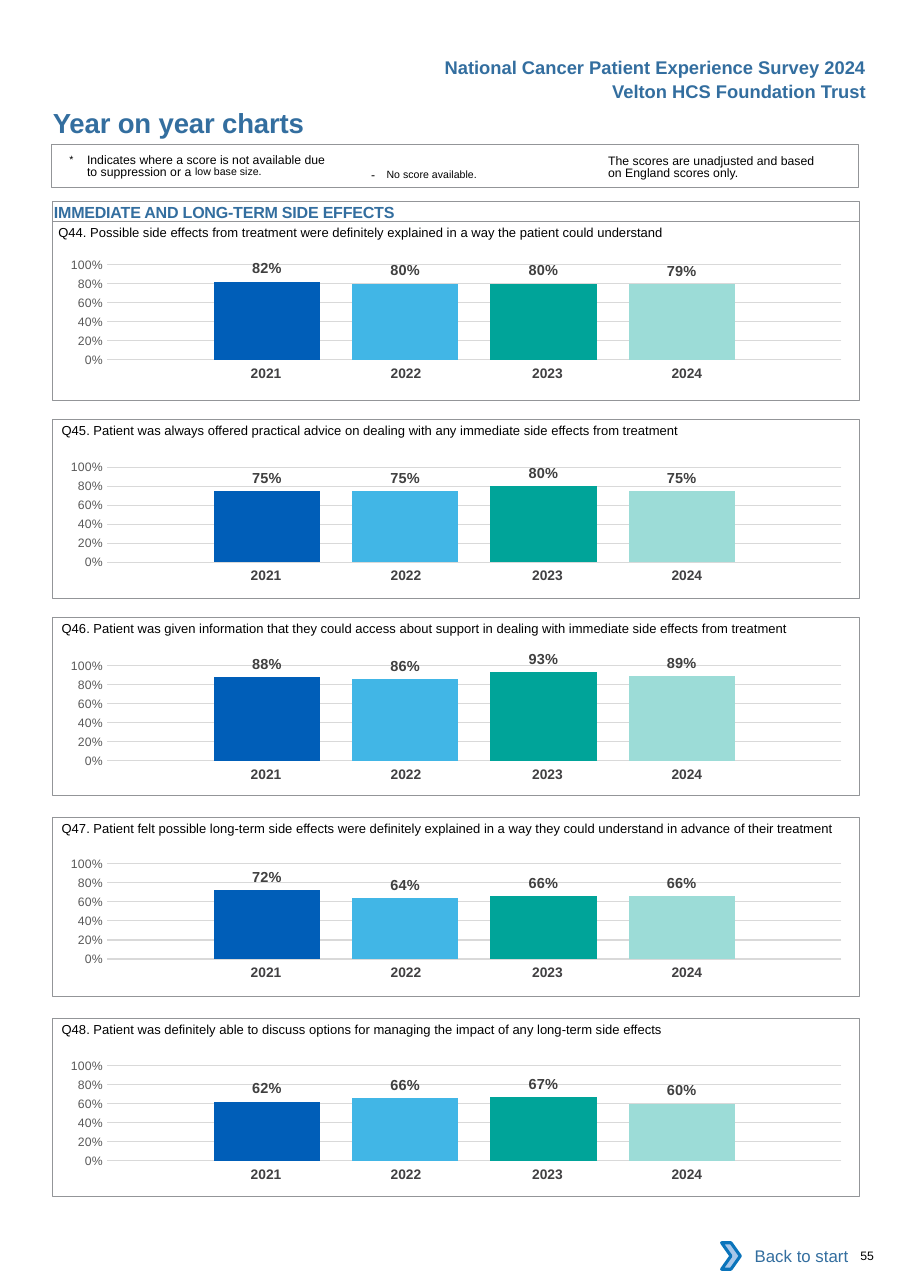
import lxml.etree
import pptx
import pptx.chart.data
import pptx.dml.color
import pptx.enum.chart
import pptx.enum.shapes
import pptx.enum.text
import pptx.oxml.ns
import pptx.util

SCALE = 9144
BLUE, BLACK, GREY = "336E9F", "000000", "939598"
YEARS = ["2021", "2022", "2023", "2024"]
FILLS = ["005EB8", "41B6E6", "00A499", "9CDCD7"]
LEFT, CENTER, RIGHT = (pptx.enum.text.PP_ALIGN.LEFT, pptx.enum.text.PP_ALIGN.CENTER,
                       pptx.enum.text.PP_ALIGN.RIGHT)
TOP, MIDDLE = pptx.enum.text.MSO_ANCHOR.TOP, pptx.enum.text.MSO_ANCHOR.MIDDLE
RECT = pptx.enum.shapes.MSO_SHAPE.RECTANGLE
CHEVRON = pptx.enum.shapes.MSO_SHAPE.CHEVRON

PANELS = [
    (53, 201, 222, [82, 80, 80, 79],
     "Q44. Possible side effects from treatment were definitely explained in a way "
     "the patient could understand"),
    (56, 381, 406, [75, 75, 80, 75],
     "Q45. Patient was always offered practical advice on dealing with any immediate "
     "side effects from treatment"),
    (56, 560, 586, [88, 86, 93, 89],
     "Q46. Patient was given information that they could access about support in "
     "dealing with immediate side effects from treatment"),
    (56, 742, 766, [72, 64, 66, 66],
     "Q47. Patient felt possible long-term side effects were definitely explained in "
     "a way they could understand in advance of their treatment"),
    (56, 924, 949, [62, 66, 67, 60],
     "Q48. Patient was definitely able to discuss options for managing the impact of "
     "any long-term side effects"),
]


def px(count):
    return pptx.util.Emu(count * SCALE)


def hue(code):
    return pptx.dml.color.RGBColor.from_string(code)


def put(item, values):
    for name, value in values.items():
        setattr(item, name, value)


def style(font, size, code, bold=False, name="Arial"):
    put(font, {"name": name, "size": pptx.util.Pt(size), "bold": bold})
    font.color.rgb = hue(code)


def fill_text(shape, runs, size, code=BLUE, bold=False, align=LEFT,
              anchor=MIDDLE, pads=(0, 0, 0, 0), wrap=True):
    left, top, right, bottom = map(px, pads)
    put(shape.text_frame, {
        "margin_left": left, "margin_top": top, "margin_right": right,
        "margin_bottom": bottom, "vertical_anchor": anchor, "word_wrap": wrap})
    line = shape.text_frame.paragraphs[0]
    line.alignment = align
    for words, extra in runs:
        run = line.add_run()
        run.text = words
        style(run.font, extra.get("size", size), code, bold)
        for key in ("baseline", "spc"):
            if key in extra:
                run._r.get_or_add_rPr().set(key, str(extra[key]))
    return line


def add_text(slide, box, runs, size, **look):
    if isinstance(runs, str):
        runs = [(runs, {})]
    shape = slide.shapes.add_textbox(*map(px, box))
    return fill_text(shape, runs, size, **look)


def add_box(slide, box, kind=RECT, fill=None, edge=None, width=0.5):
    shape = slide.shapes.add_shape(kind, *map(px, box))
    shape.shadow.inherit = False
    if fill:
        shape.fill.solid()
        shape.fill.fore_color.rgb = hue(fill)
    else:
        shape.fill.background()
    if edge:
        shape.line.color.rgb = hue(edge)
        shape.line.width = pptx.util.Pt(width)
    else:
        shape.line.fill.background()
    return shape


def add_years(slide, top):
    table = slide.shapes.add_table(1, 4, *map(px, (173, top, 515, 27))).table
    put(table, {"first_row": False, "horz_banding": False})
    for spot, (year, width, pad) in enumerate(
            zip(YEARS, (127, 127, 134, 127), (0, 0, 4, 12))):
        table.columns[spot].width = px(width)
        cell = table.cell(0, spot)
        cell.fill.background()
        put(cell, {"margin_left": px(10), "margin_right": px(pad),
                   "margin_top": px(5), "margin_bottom": px(5)})
        line = cell.text_frame.paragraphs[0]
        line.alignment = CENTER
        run = line.add_run()
        run.text = year
        style(run.font, 9, "414042", True)


def set_plot(chart):
    tag = pptx.oxml.ns.qn
    area = chart._chartSpace.find(".//" + tag("c:plotArea"))
    for old in area.findall(tag("c:layout")):
        area.remove(old)
    layout = lxml.etree.Element(tag("c:layout"))
    area.insert(0, layout)
    manual = lxml.etree.SubElement(layout, tag("c:manualLayout"))
    for name, value in (("layoutTarget", "inner"), ("xMode", "edge"), ("yMode", "edge"),
                        ("x", "0.08"), ("y", "0.14"), ("w", "0.91"), ("h", "0.67")):
        lxml.etree.SubElement(manual, tag("c:" + name)).set("val", value)


def add_bars(slide, top, scores):
    data = pptx.chart.data.CategoryChartData(number_format="0%")
    data.categories = ["1"]
    for year, score in zip(YEARS, scores):
        data.add_series(year, [score / 100])
    chart = slide.shapes.add_chart(
        pptx.enum.chart.XL_CHART_TYPE.COLUMN_CLUSTERED,
        *map(px, (39, top, 732, 129)), data).chart
    put(chart, {"has_legend": False, "has_title": False})
    style(chart.font, 10, BLACK, name="Calibri")
    set_plot(chart)
    chart.category_axis.visible = False
    axis = chart.value_axis
    none = pptx.enum.chart.XL_TICK_MARK.NONE
    put(axis, {"minimum_scale": 0, "maximum_scale": 1, "major_unit": 0.2,
               "major_tick_mark": none, "minor_tick_mark": none,
               "has_major_gridlines": True})
    axis.format.line.fill.background()
    grid = axis.major_gridlines.format.line
    grid.color.rgb = hue("D9D9D9")
    grid.width = pptx.util.Pt(0.75)
    form = {"number_format": "0%", "number_format_is_linked": False}
    put(axis.tick_labels, form)
    style(axis.tick_labels.font, 8, "595959")
    plot = chart.plots[0]
    put(plot, {"gap_width": 200, "overlap": -30, "vary_by_categories": False})
    for bar, code in zip(plot.series, FILLS):
        bar.format.fill.solid()
        bar.format.fill.fore_color.rgb = hue(code)
        put(bar.data_labels, {
            **form, "show_value": True,
            "position": pptx.enum.chart.XL_LABEL_POSITION.OUTSIDE_END})
        style(bar.data_labels.font, 9.5, "404040", True)


def add_panel(slide, left, top, start, scores, words):
    add_years(slide, start + 105)
    add_bars(slide, start, scores)
    add_box(slide, (48, top, 732, 162), edge=GREY)
    add_text(slide, (left, top, 724, 20), words, 8.5, code=BLACK)


def add_notes(slide):
    add_box(slide, (47, 131, 732, 39), edge=GREY, width=0.75)
    star = add_text(slide, (63, 138, 238, 30), [
        ("*\t", {"size": 12, "baseline": 3000}),
        ("Indicates where a score is not available due to suppression or a ", {}),
        ("low base size.", {"size": 12, "baseline": 7000}),
    ], 8, code=BLACK, anchor=TOP, pads=(0, 3, 0, 0))
    for key, value in (("marL", 16), ("indent", -16)):
        star._p.get_or_add_pPr().set(key, str(px(value)))
    scope = add_text(slide, (552, 138, 195, 27),
                     "The scores are unadjusted and based on England scores only.",
                     8, code=BLACK, anchor=TOP, pads=(0, 3, 0, 0))
    for line in (star, scope):
        line.line_spacing = pptx.util.Pt(8.1)
    add_text(slide, (327, 141, 183, 24), [
        ("- ", {"spc": 260}),
        ("No score available.", {"size": 12, "baseline": 3000}),
    ], 8, code=BLACK, anchor=TOP, pads=(10, 5, 10, 5))


def main():
    deck = pptx.Presentation()
    put(deck, {"slide_width": px(826), "slide_height": px(1169)})
    slide = deck.slides.add_slide(deck.slide_layouts[6])
    for box, words in (
            ((392, 46, 404, 30), "National Cancer Patient Experience Survey 2024"),
            ((539, 68, 257, 30), "Velton HCS Foundation Trust")):
        add_text(slide, box, words, 12, bold=True, align=RIGHT,
                 pads=(10, 5, 10, 5), wrap=False)
    add_text(slide, (48, 96, 450, 30), [("Year on year charts", {"spc": -10})],
             18, bold=True)
    add_notes(slide)
    head = add_box(slide, (48, 183, 732, 18), edge=GREY)
    fill_text(head, [("IMMEDIATE AND LONG-TERM SIDE EFFECTS", {"spc": -10})],
              10.5, bold=True, pads=(1, 1, 0, 0))
    for panel in PANELS:
        add_panel(slide, *panel)
    back = add_box(slide, (662, 1119, 118, 42), fill="FFFFFF")
    fill_text(back, [("Back to start", {})], 11, align=RIGHT, pads=(10, 5, 10, 5))
    add_box(slide, (655, 1128, 17, 24), CHEVRON, "A8C7E9", "0A74BB", 2)
    add_text(slide, (781, 1133, 42, 13), "55", 8, code=BLACK)
    deck.save("out.pptx")


if __name__ == "__main__":
    main()
